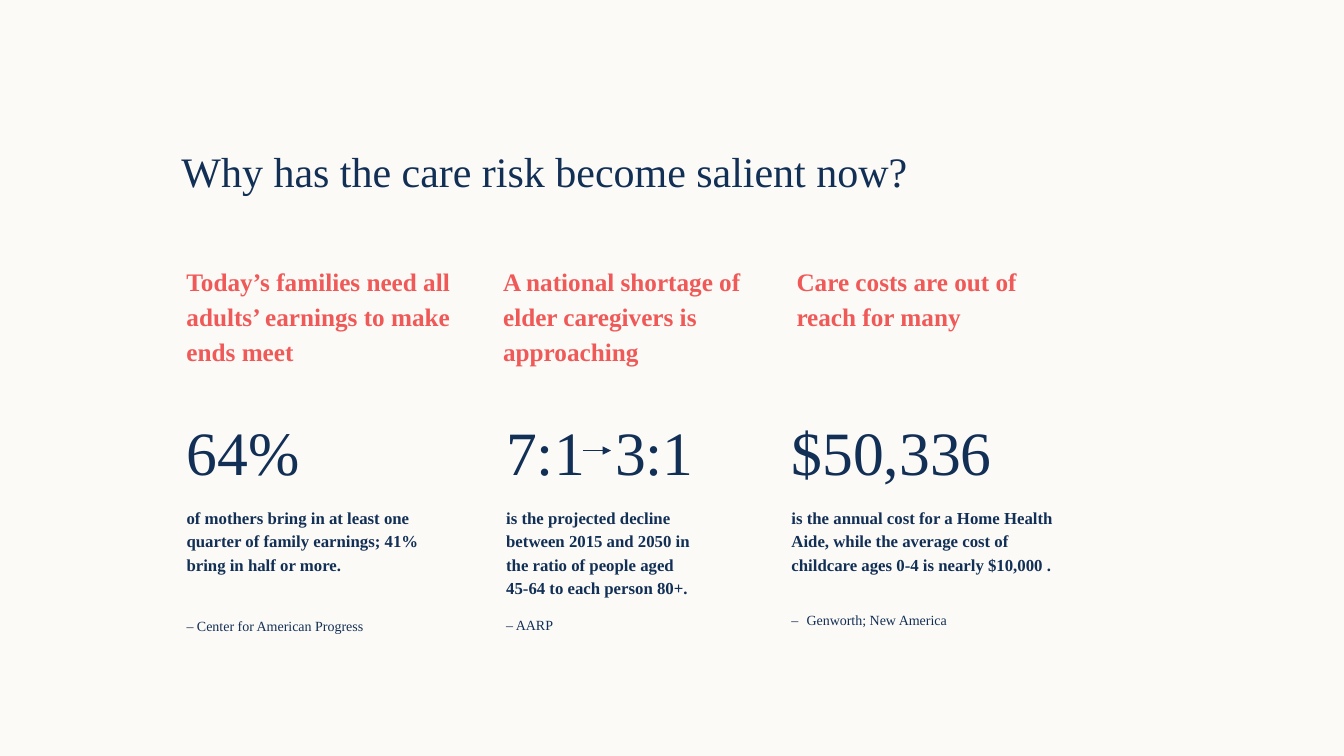
"""Build the slide on why the care risk has become salient now."""
from lxml import etree
from pptx import Presentation
from pptx import util as u
from pptx.dml.color import RGBColor
from pptx.enum import shapes, text
from pptx.oxml import ns

NAVY, CORAL, CREAM = "122F56", "EF5958", "FCFAF6"
INSET = 0.13
HEADING_TOP, FIGURE_TOP, DETAIL_TOP = 2.47, 4.3, 4.88
HEADING_HEIGHT, FIGURE_HEIGHT = 1.15, 0.34


def color(value):
    return RGBColor.from_string(value)


def add_text(lines, left, top, width, height, size=12, ink=NAVY, bold=False, indent=0,
             spacing=1.15, gap=0, tab=None, fill=None, middle=False):
    """Add a box whose first line has the given format and whose later lines are plain 10 pt."""
    frame = [u.Inches(length) for length in (left, top, width, height)]
    if fill:
        shape = slide.shapes.add_shape(shapes.MSO_SHAPE.RECTANGLE, *frame)
        shape.shadow.inherit = False
        shape.fill.solid()
        shape.fill.fore_color.rgb = color(fill)
        shape.line.fill.background()
    else:
        shape = slide.shapes.add_textbox(*frame)
    body = shape.text_frame
    body.word_wrap = True
    body.vertical_anchor = text.MSO_ANCHOR.MIDDLE if middle else text.MSO_ANCHOR.TOP
    body.margin_left = u.Inches(INSET + indent)
    body.margin_right = body.margin_top = body.margin_bottom = u.Inches(INSET)
    for index, line in enumerate(lines):
        paragraph = body.paragraphs[0] if index == 0 else body.add_paragraph()
        if "\t" in line:
            stops = etree.SubElement(paragraph._p.get_or_add_pPr(), ns.qn("a:tabLst"))
            etree.SubElement(stops, ns.qn("a:tab"), pos=str(u.Inches(tab)), algn="l")
        paragraph.alignment = text.PP_ALIGN.LEFT
        paragraph.line_spacing = spacing
        if index < len(lines) - 1:
            paragraph.space_after = u.Pt(gap)
        run = paragraph.add_run()
        run.text = line
        run.font.name = "Times New Roman"
        run.font.size = u.Pt(size if index == 0 else 10)
        run.font.bold = bold and index == 0
        run.font.color.rgb = color(ink)


presentation = Presentation()
presentation.slide_width, presentation.slide_height = u.Inches(13.33), u.Inches(7.5)
slide = presentation.slides.add_slide(presentation.slide_layouts[6])
slide.background.fill.solid()
slide.background.fill.fore_color.rgb = color(CREAM)

add_text(["Why has the care risk become salient now?"], 1.67, 1.24, 9.42, 0.93, size=30)

columns = [
    dict(left=1.72, heading_left=1.72, heading_width=3.16, figure_width=2.15,
         detail_width=2.62, detail_height=1.3, gap=28.8,
         heading="Today’s families need all adults’ earnings to make ends meet",
         figure="64%",
         detail="of mothers bring in at least one quarter of family earnings; "
                "41% bring in half or more.",
         source="– Center for American Progress"),
    dict(left=4.45, heading_left=4.49, heading_width=3.23, figure_width=2.99,
         detail_width=2.62, detail_height=1.57, gap=12,
         indent=0.44, heading_indent=0.37, fill=CREAM,
         heading="A national shortage of elder caregivers is approaching",
         figure="7:1\t3:1",
         detail="is the projected decline between 2015 and 2050 in the ratio of "
                "people aged 45-64 to each person 80+.",
         source="– AARP"),
    dict(left=7.72, heading_left=7.77, heading_width=2.62, figure_width=2.79,
         detail_width=2.94, detail_height=1.52, gap=24.5,
         heading="Care costs are out of reach for many",
         figure="$50,336",
         detail="is the annual cost for a Home Health Aide, while the average cost "
                "of childcare ages 0-4 is nearly $10,000 .",
         source="–\tGenworth; New America"),
]

for column in columns:
    indent = column.get("indent", 0)
    add_text([column["figure"]], column["left"], FIGURE_TOP, column["figure_width"],
             FIGURE_HEIGHT, size=44, spacing=1.0, indent=indent, tab=1.08,
             fill=column.get("fill"), middle=True)
    add_text([column["detail"], column["source"]], column["left"], DETAIL_TOP,
             column["detail_width"], column["detail_height"], bold=True,
             indent=indent, gap=column["gap"], tab=0.15)
    add_text([column["heading"]], column["heading_left"], HEADING_TOP,
             column["heading_width"], HEADING_HEIGHT, size=18, ink=CORAL, bold=True,
             indent=column.get("heading_indent", 0))

arrow_middle = FIGURE_TOP + FIGURE_HEIGHT / 2
arrow = slide.shapes.add_connector(
    shapes.MSO_CONNECTOR.STRAIGHT,
    *[u.Inches(length) for length in (5.78, arrow_middle, 6.06, arrow_middle)])
arrow.line.color.rgb = color(NAVY)
arrow.line.width = u.Pt(0.5)
etree.SubElement(arrow.line._get_or_add_ln(), ns.qn("a:tailEnd"), type="triangle")
etree.SubElement(arrow._element.spPr, ns.qn("a:effectLst"))

presentation.save("out.pptx")
